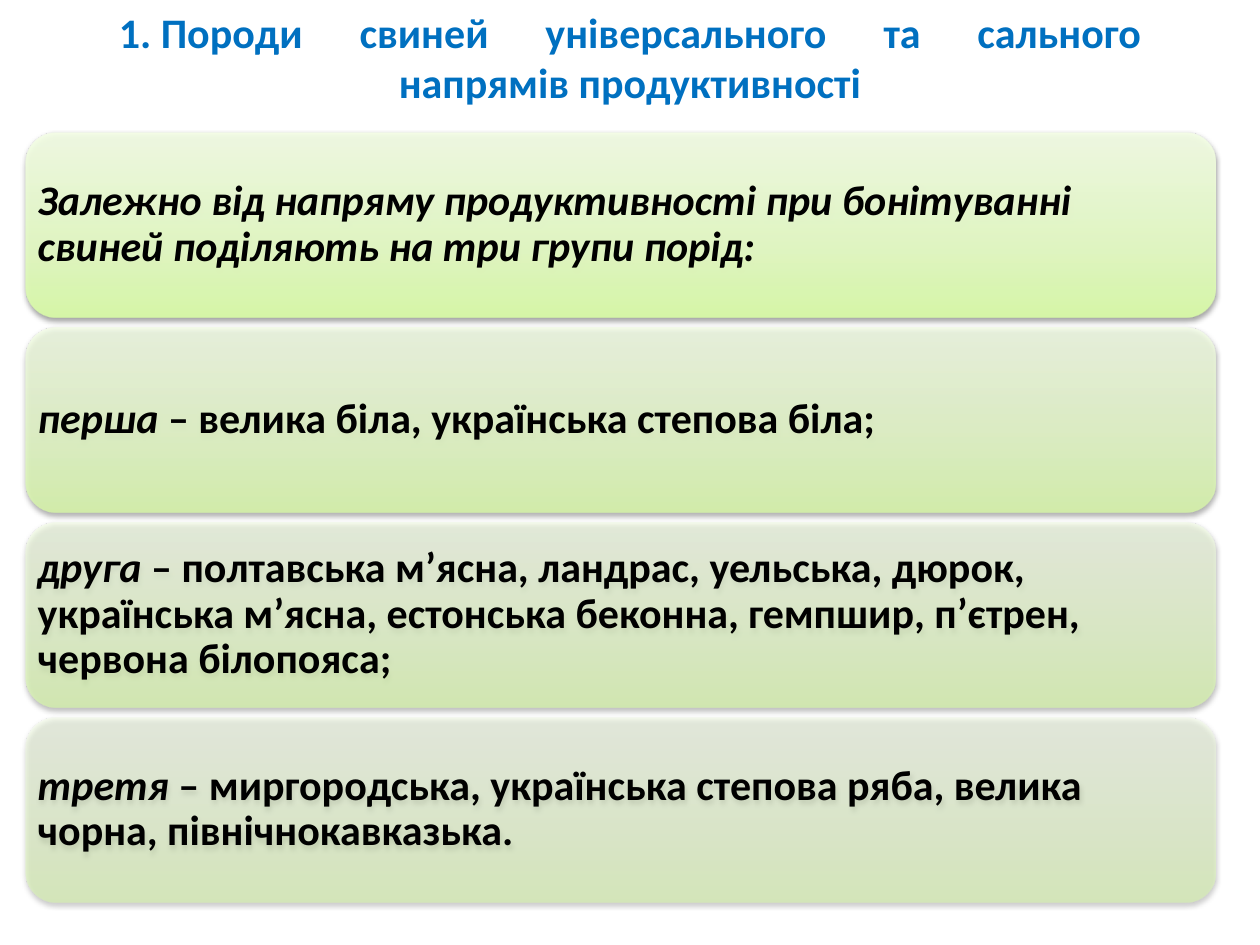
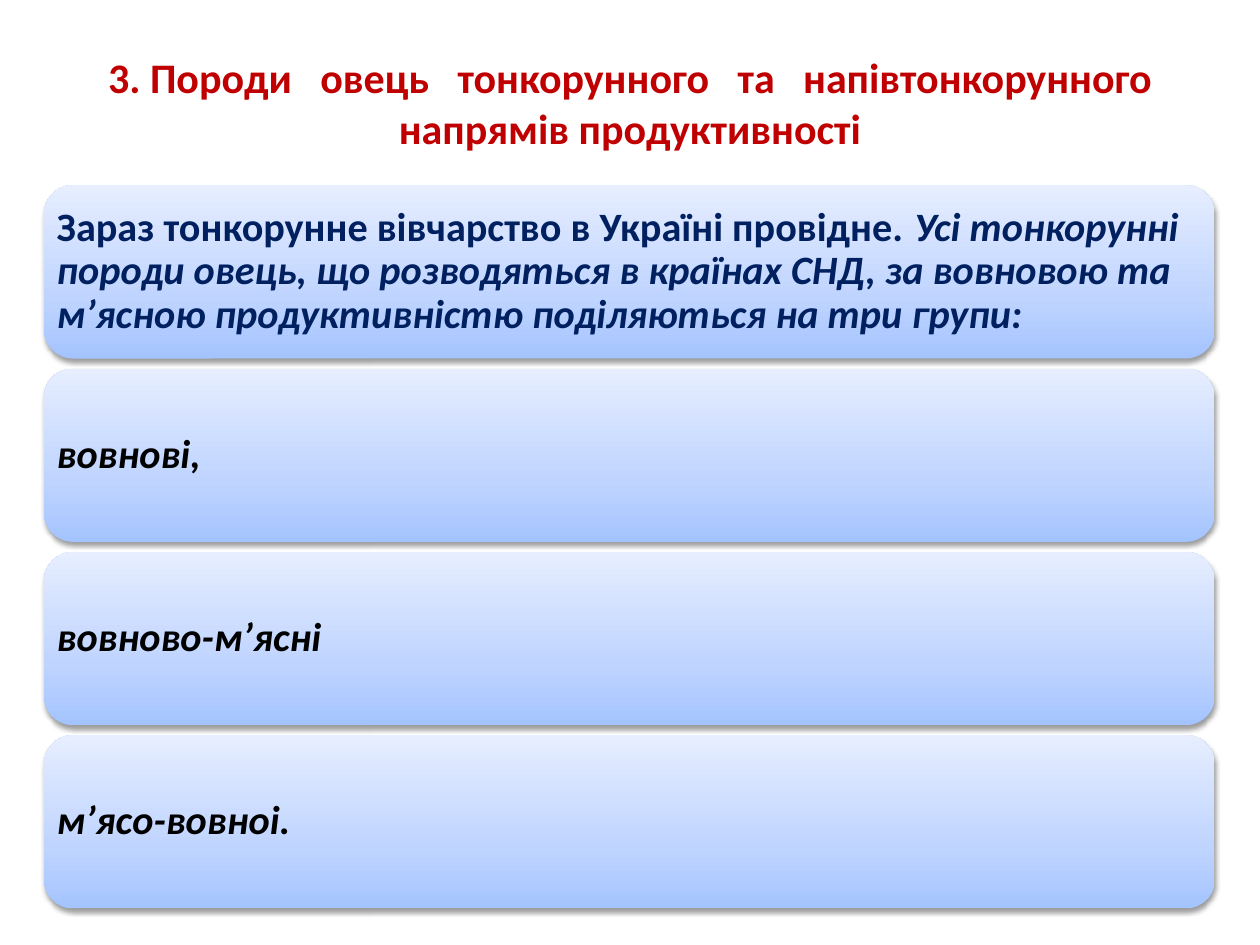
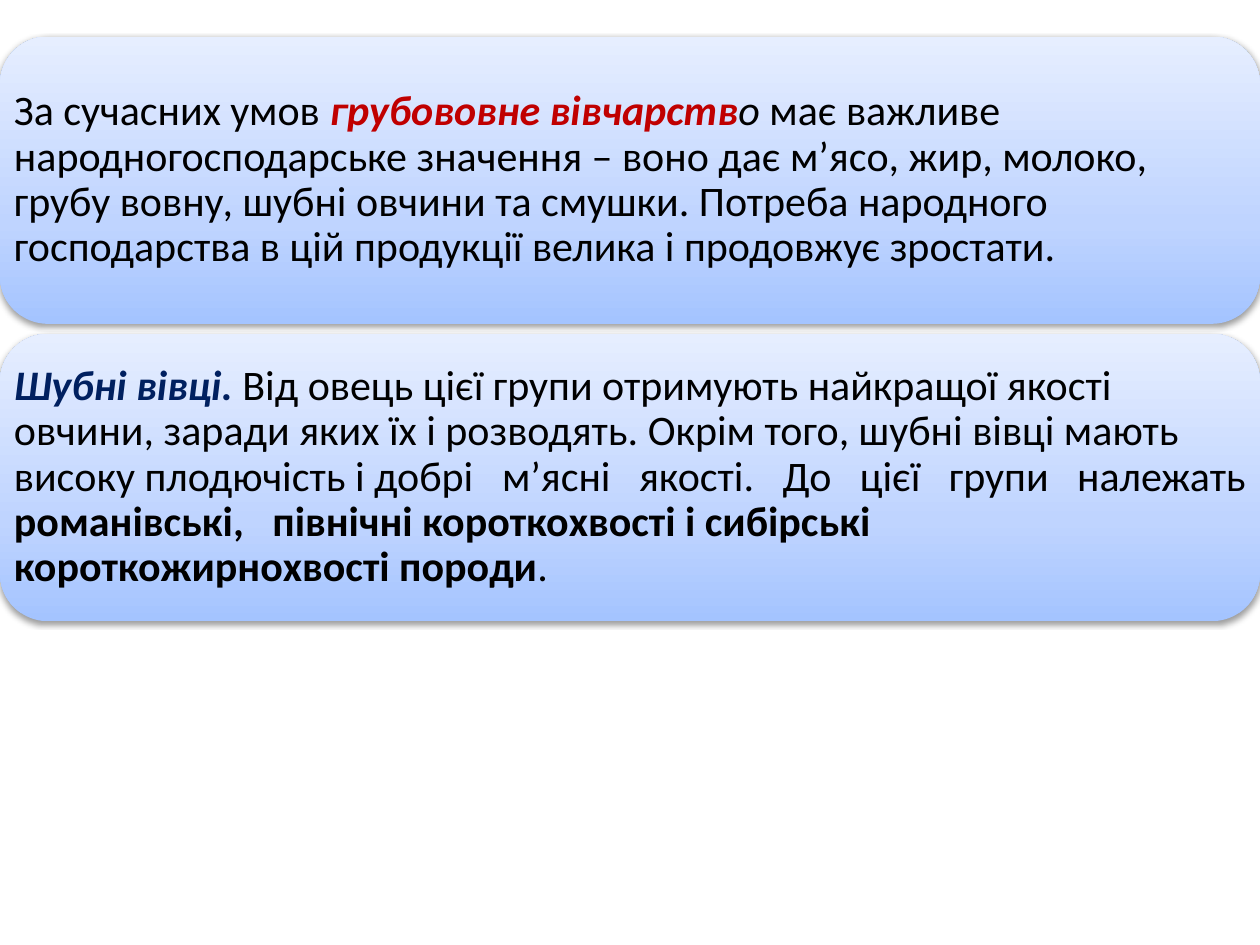
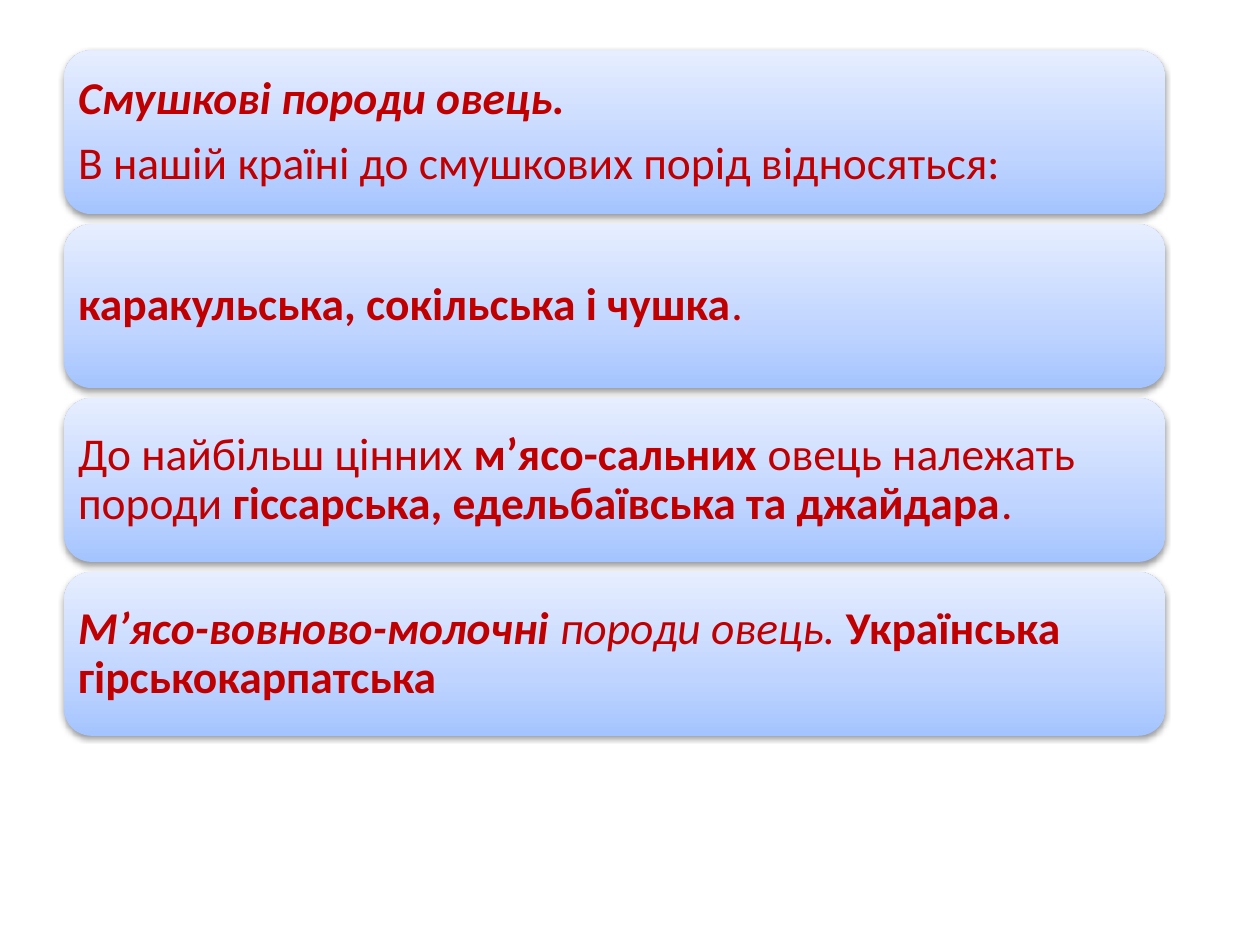
from lxml import etree
from pptx import Presentation
from pptx.dml.color import RGBColor
from pptx.enum.shapes import MSO_SHAPE
from pptx.enum.text import MSO_ANCHOR, MSO_AUTO_SIZE, PP_ALIGN
from pptx.oxml import parse_xml
from pptx.oxml.ns import nsdecls
from pptx.util import Inches, Pt

ROUND = MSO_SHAPE.ROUNDED_RECTANGLE
TOP, MIDDLE = MSO_ANCHOR.TOP, MSO_ANCHOR.MIDDLE
NO_FIT = MSO_AUTO_SIZE.NONE
LEFT, CENTER = PP_ALIGN.LEFT, PP_ALIGN.CENTER

BLACK = RGBColor(0x00, 0x00, 0x00)
BLUE = RGBColor(0x00, 0x70, 0xC0)
NAVY = RGBColor(0x00, 0x20, 0x60)
RED = RGBColor(0xC0, 0x00, 0x00)

# Gradient stops: position in percent, colour
GREEN_FADE = [(0, RGBColor(0xDA, 0xFD, 0xA7)), (35, RGBColor(0xE4, 0xFC, 0xC2)),
              (100, RGBColor(0xF5, 0xFF, 0xE7))]
BLUE_FADE = [(0, RGBColor(0xA4, 0xC4, 0xFF)), (35, RGBColor(0xBF, 0xD4, 0xFF)),
             (100, RGBColor(0xE6, 0xEE, 0xFF))]

FONT = "Calibri"
GAP = 0.08       # between bands, inches
CORNER = 0.049   # text inset of a rounded corner, share of the band height
WIDE, MID = 27, 10.8  # extra width of a stretched word gap, points
TITLE_ONLY, BLANK = 5, 6


def assign(target, values):
    for name, value in values.items():
        setattr(target, name, value)


# Text: "~" marks a stretched word gap; style holds "b" and/or "i"
def add_run(para, text, size, color, style="", gap=MID):
    for num, part in enumerate(text.split("~")):
        for piece, spread in ((" ", gap), (part, 0)) if num else ((part, 0),):
            if not piece:
                continue
            run = para.add_run()
            run.text = piece
            assign(run.font, {"name": FONT, "size": Pt(size),
                              "bold": "b" in style, "italic": "i" in style})
            run.font.color.rgb = color
            if spread:
                run._r.get_or_add_rPr().set("spc", str(round(spread * 100)))


def add_title(slide, text, top, height, color, gap):
    title = slide.shapes.title
    assign(title, {"left": 0, "top": Inches(top),
                   "width": Inches(10), "height": Inches(height)})
    frame = title.text_frame
    assign(frame, {"vertical_anchor": TOP, "word_wrap": True, "auto_size": NO_FIT})
    para = frame.paragraphs[0]
    para.alignment = CENTER
    add_run(para, text, 24, color, "b", gap)


# Band look: upward gradient and soft shadow
def paint(shape, fade, alpha):
    shape.line.fill.background()
    stops = "".join(
        f'<a:gs pos="{pos * 1000}"><a:srgbClr val="{color}">'
        f'<a:alpha val="{alpha * 1000}"/></a:srgbClr></a:gs>'
        for pos, color in fade)
    grad = parse_xml(
        f'<a:gradFill {nsdecls("a")} rotWithShape="1"><a:gsLst>{stops}</a:gsLst>'
        '<a:lin ang="16200000" scaled="0"/></a:gradFill>')
    props = shape._element.spPr
    props.prstGeom.addnext(grad)
    shape.shadow.inherit = False
    effects = props.find(f"{{{grad.nsmap['a']}}}effectLst")
    shadow = etree.SubElement(effects, f"{{{grad.nsmap['a']}}}outerShdw", {
        "blurRad": str(Pt(3.1)), "dist": str(Pt(1.6)),
        "dir": "5400000", "rotWithShape": "0"})
    shadow.append(parse_xml(
        f'<a:srgbClr {nsdecls("a")} val="{BLACK}"><a:alpha val="38000"/></a:srgbClr>'))


def add_band(slide, box, paras, size, inset, fade, alpha):
    shape = slide.shapes.add_shape(ROUND, *(Inches(num) for num in box))
    paint(shape, fade, alpha)
    frame = shape.text_frame
    pad = Inches(max(0, inset - CORNER * box[3]))
    assign(frame, {"word_wrap": True, "vertical_anchor": MIDDLE,
                   "margin_left": pad, "margin_right": pad,
                   "margin_top": pad, "margin_bottom": pad})
    for num, runs in enumerate(paras):
        para = frame.add_paragraph() if num else frame.paragraphs[0]
        assign(para, {"alignment": LEFT, "line_spacing": 0.9,
                      "space_after": Pt(round(size * 0.35))})
        for text, color, style in runs:
            add_run(para, text, size, color, style)


# Equal bands between top and end; each band is a list of paragraphs
def add_stack(slide, left, top, width, end, bands, size,
              inset=0.1, fade=BLUE_FADE, alphas=None):
    count = len(bands)
    height = (end - top - GAP * (count - 1)) / count
    for num, paras in enumerate(bands):
        box = (left, top + num * (height + GAP), width, height)
        alpha = alphas[num] if alphas else 100
        add_band(slide, box, paras, size, inset, fade, alpha)


PIGS = [
    [[("Залежно від напряму продуктивності при бонітуванні свиней поділяють "
       "на три групи порід:", BLACK, "bi")]],
    [[("перша ", BLACK, "bi"),
      ("– велика біла, українська степова біла;", BLACK, "b")]],
    [[("друга ", BLACK, "bi"),
      ("– полтавська м’ясна, ландрас, уельська, дюрок, українська м’ясна, "
       "естонська беконна, гемпшир, п’єтрен, червона білопояса;", BLACK, "b")]],
    [[("третя ", BLACK, "bi"),
      ("– миргородська, українська степова ряба, велика чорна, "
       "північнокавказька.", BLACK, "b")]],
]

FINE_WOOL = [
    [[("Зараз тонкорунне вівчарство в Україні провідне. ", NAVY, "b"),
      ("Усі тонкорунні породи овець, що розводяться в країнах СНД, за вовновою "
       "та м’ясною продуктивністю поділяються на три групи:", NAVY, "bi")]],
    [[("вовнові,", BLACK, "bi")]],
    [[("вовново-м’ясні", BLACK, "bi")]],
    [[("м’ясо-вовноі.", BLACK, "bi")]],
]

COARSE_WOOL = [
    [[("За сучасних умов ", BLACK, ""),
      ("грубововне вівчарств", RED, "bi"),
      ("о ", BLACK, "i"),
      ("має важливе народногосподарське значення – воно дає м’ясо, жир, молоко, "
       "грубу вовну, шубні овчини та смушки. Потреба народного господарства "
       "в цій продукції велика і продовжує зростати.", BLACK, "")]],
    [[("Шубні вівці. ", NAVY, "bi"),
      ("Від овець цієї групи отримують найкращої якості овчини, заради яких їх "
       "і розводять. Окрім того, шубні вівці мають високу плодючість і добрі~"
       "м’ясні~якості.~До~цієї~групи~належать~", BLACK, ""),
      ("романівські,~північні короткохвості і сибірські короткожирнохвості "
       "породи", BLACK, "b"),
      (".", BLACK, "")]],
]

LAMBSKIN = [
    [[("Смушкові породи овець.", RED, "bi")],
     [("В нашій країні до смушкових порід відносяться:", RED, "")]],
    [[("каракульська, сокільська і чушка", RED, "b"), (".", RED, "")]],
    [[("До найбільш цінних ", RED, ""),
      ("м’ясо-сальних ", RED, "b"),
      ("овець належать породи ", RED, ""),
      ("гіссарська, едельбаївська та джайдара", RED, "b"),
      (".", RED, "")]],
    [[("М’ясо-вовново-молочні", RED, "bi"),
      (" породи овець. ", RED, "i"),
      ("Українська гірськокарпатська", RED, "b")]],
]


def main():
    deck = Presentation()
    assign(deck, {"slide_width": Inches(10), "slide_height": Inches(7.5)})
    pigs, fine, coarse, lamb = (
        deck.slides.add_slide(deck.slide_layouts[num])
        for num in (TITLE_ONLY, TITLE_ONLY, BLANK, BLANK))

    # Pig breeds
    add_title(pigs, "1. Породи~свиней~універсального~та~сального~"
              "напрямів продуктивності", 0, 1.21, BLUE, WIDE)
    add_stack(pigs, 0.2, 1.05, 9.45, 7.16, PIGS, 24,
              fade=GREEN_FADE, alphas=(90, 77, 63, 50))

    # Fine-wool sheep
    add_title(fine, "3. Породи~овець~тонкорунного~та~напівтонкорунного~"
              "напрямів продуктивності", 0.36, 1.51, RED, MID)
    add_stack(fine, 0.35, 1.47, 9.29, 7.21, FINE_WOOL, 23)

    # Coarse-wool sheep
    add_stack(coarse, 0, 0.29, 10, 4.93, COARSE_WOOL, 24)

    # Lambskin and meat sheep
    add_stack(lamb, 0.51, 0.4, 8.74, 5.84, LAMBSKIN, 26, inset=0.11)

    deck.save("out.pptx")


if __name__ == "__main__":
    main()
